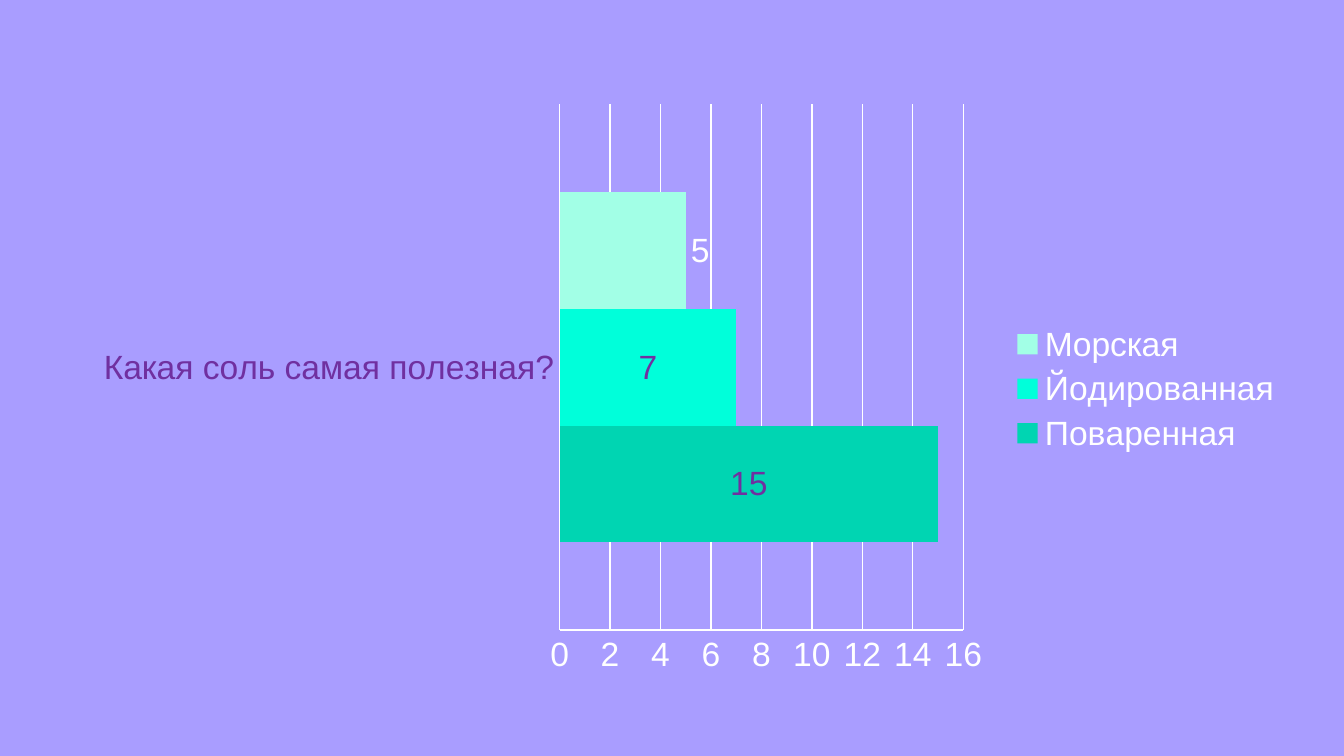
import pptx
import pptx.chart.data
import pptx.dml.color
import pptx.enum.chart
import pptx.util
from pptx.util import Cm

COLORS = {
    "background": "A99DFF",
    "white": "FFFFFF",
    "purple": "7030A0",
    "table": "00D5B2",
    "iodised": "00FFDA",
    "sea": "A2FFE6",
}
CATEGORY = "Какая соль самая полезная?"
# Name, votes, bar colour, label colour, centred label
SALTS = [
    ("Поваренная", 15, "table", "purple", True),
    ("Йодированная", 7, "iodised", "purple", True),
    ("Морская", 5, "sea", "white", False),
]


def rgb(name):
    return pptx.dml.color.RGBColor.from_string(COLORS[name])


def set_font(font, color="white", size=18):
    font.name = "Arial"
    font.size = pptx.util.Pt(size)
    font.bold = False
    font.color.rgb = rgb(color)


def set_line(line, color="white", width=0.75):
    line.color.rgb = rgb(color)
    line.width = pptx.util.Pt(width)


def style_axis(axis, color, grid):
    axis.major_tick_mark = pptx.enum.chart.XL_TICK_MARK.NONE
    axis.minor_tick_mark = pptx.enum.chart.XL_TICK_MARK.NONE
    axis.has_major_gridlines = grid
    if grid:
        set_line(axis.major_gridlines.format.line)
    set_line(axis.format.line)
    set_font(axis.tick_labels.font, color)


def style_series(series, fill, label_color, centred):
    series.format.fill.solid()
    series.format.fill.fore_color.rgb = rgb(fill)
    series.invert_if_negative = False
    labels = series.data_labels
    labels.show_value = True
    position = pptx.enum.chart.XL_LABEL_POSITION
    labels.position = position.CENTER if centred else position.OUTSIDE_END
    set_font(labels.font, label_color)


def add_bar_chart(s, left, top, width, height):
    data = pptx.chart.data.CategoryChartData()
    data.categories = [CATEGORY]
    for name, votes, *_ in SALTS:
        data.add_series(name, [votes])
    kind = pptx.enum.chart.XL_CHART_TYPE.BAR_CLUSTERED
    chart = s.shapes.add_chart(kind, left, top, width, height, data).chart
    chart.has_title = False
    set_font(chart.font)

    # Bars
    plot = chart.plots[0]
    plot.gap_width = 150
    plot.overlap = 0
    plot.vary_by_categories = False
    for series, (_, _, fill, label_color, centred) in zip(plot.series, SALTS):
        style_series(series, fill, label_color, centred)

    # Axes
    style_axis(chart.category_axis, "purple", False)
    style_axis(chart.value_axis, "white", True)

    # Legend
    chart.has_legend = True
    chart.legend.position = pptx.enum.chart.XL_LEGEND_POSITION.RIGHT
    chart.legend.include_in_layout = False
    set_font(chart.legend.font)


def main():
    prs = pptx.Presentation()
    prs.slide_width, prs.slide_height = Cm(25.4), Cm(14.29)
    s = prs.slides.add_slide(prs.slide_layouts[6])
    s.background.fill.solid()
    s.background.fill.fore_color.rgb = rgb("background")
    add_bar_chart(s, Cm(1.5), Cm(1.75), Cm(23), Cm(11.2))
    prs.save("out.pptx")


if __name__ == "__main__":
    main()
